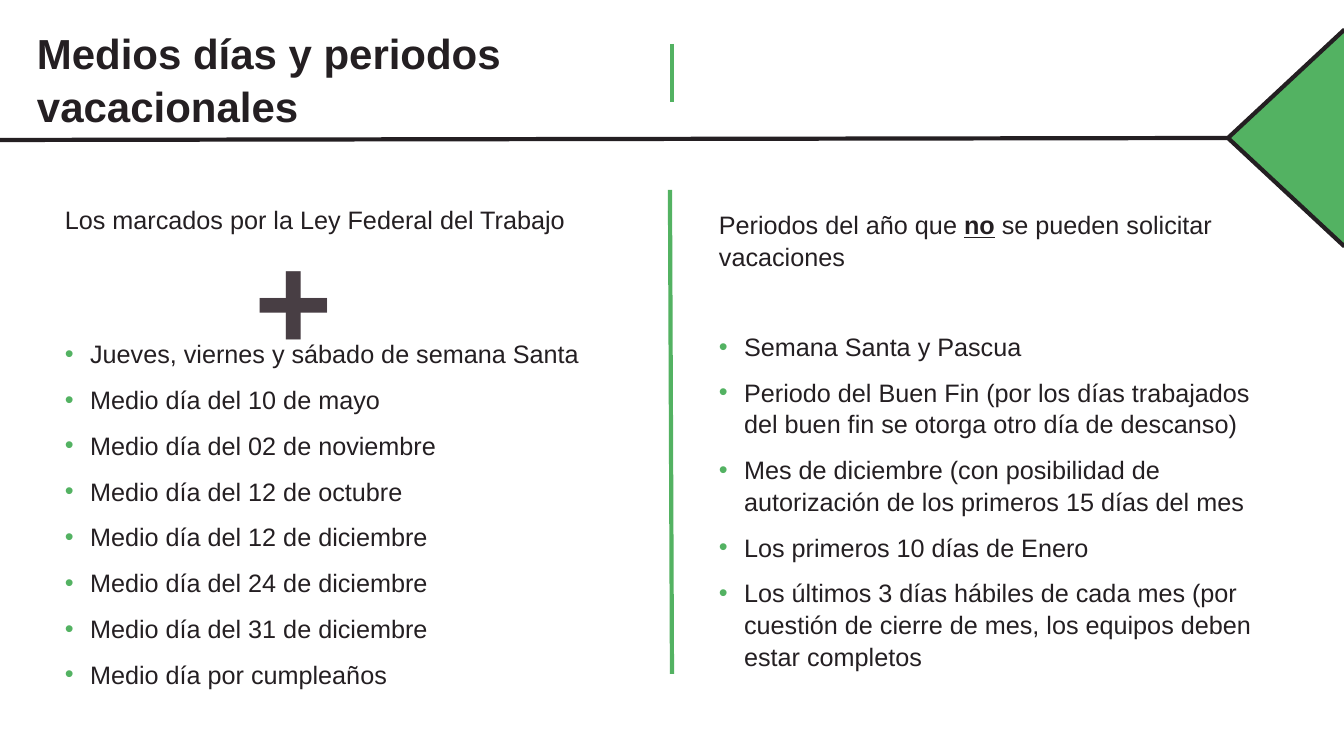
from lxml import etree
from pptx import Presentation
from pptx.dml.color import RGBColor
from pptx.enum.shapes import MSO_CONNECTOR, MSO_SHAPE
from pptx.enum.text import MSO_AUTO_SIZE, PP_ALIGN
from pptx.oxml.ns import qn
from pptx.util import Emu, Inches, Pt

STRAIGHT = MSO_CONNECTOR.STRAIGHT
DIAMOND = MSO_SHAPE.DIAMOND
LEFT, CENTER = PP_ALIGN.LEFT, PP_ALIGN.CENTER
FIT_SHAPE, FIXED = MSO_AUTO_SIZE.SHAPE_TO_FIT_TEXT, MSO_AUTO_SIZE.NONE

INK = RGBColor(0x24, 0x1F, 0x22)
GREEN = RGBColor(0x53, 0xB2, 0x62)
PLUM = RGBColor(0x48, 0x3E, 0x44)
WHITE = RGBColor(0xFF, 0xFF, 0xFF)

HOLIDAYS = [
    "Jueves, viernes y sábado de semana Santa",
    "Medio día del 10 de mayo",
    "Medio día del 02 de noviembre",
    "Medio día del 12 de octubre",
    "Medio día del 12 de diciembre",
    "Medio día del 24 de diciembre",
    "Medio día del 31 de diciembre",
    "Medio día por cumpleaños",
]
BLOCKED_PERIODS = [
    "Semana Santa y Pascua",
    "Periodo del Buen Fin (por los días trabajados del buen fin se otorga otro día de descanso)",
    "Mes de diciembre (con posibilidad de autorización de los primeros 15 días del mes",
    "Los primeros 10 días de Enero",
    "Los últimos 3 días hábiles de cada mes (por cuestión de cierre de mes, los equipos deben estar completos",
]


def px(length):
    return Emu(round(length * 914400 / 100.8))


def add_solid(parent, tag, color):
    holder = etree.SubElement(parent, qn(tag))
    etree.SubElement(holder, qn("a:srgbClr"), val=str(color))


class SlideBuilder:
    font = "Arial"
    line_width = Pt(3)
    line_spacing = 1.05
    bullet_gap = Pt(10)
    bullet_indent = Inches(0.25)

    def __init__(self, slide):
        self.shapes = slide.shapes

    def line(self, x1, y1, x2, y2, color):
        rule = self.shapes.add_connector(STRAIGHT, px(x1), px(y1), px(x2), px(y2))
        rule.line.color.rgb = color
        rule.line.width = self.line_width
        etree.SubElement(rule._element.spPr, qn("a:effectLst"))
        return rule

    def diamond(self, x, y, width, height, fill, outline):
        ornament = self.shapes.add_shape(DIAMOND, px(x), px(y), px(width), px(height))
        ornament.shadow.inherit = False
        ornament.fill.solid()
        ornament.fill.fore_color.rgb = fill
        ornament.line.color.rgb = outline
        ornament.line.width = self.line_width
        return ornament

    def frame(self, x, y, width, height, auto_size=FIXED):
        frame = self.shapes.add_textbox(px(x), px(y), px(width), px(height)).text_frame
        frame.word_wrap = True
        frame.auto_size = auto_size
        return frame

    def paragraph(self, frame, align=LEFT, before=None):
        first = frame.paragraphs[0]
        paragraph = frame.add_paragraph() if first.runs else first
        paragraph.alignment = align
        paragraph.line_spacing = self.line_spacing
        if before is not None:
            paragraph.space_before = before
        return paragraph

    def run(self, paragraph, text, size=18, color=INK, bold=False, underline=False):
        run = paragraph.add_run()
        run.text = text
        run.font.name = self.font
        run.font.size = Pt(size)
        run.font.color.rgb = color
        run.font.bold = bold
        run.font.underline = underline
        return run

    def outline(self, run, color, width):
        ln = etree.Element(qn("a:ln"), w=str(Pt(width)))
        add_solid(ln, "a:solidFill", color)
        run.font._element.insert(0, ln)

    def bullets(self, frame, items, lead):
        for index, item in enumerate(items):
            gap = self.bullet_gap if index else Pt(lead)
            paragraph = self.paragraph(frame, before=gap)
            properties = paragraph._p.get_or_add_pPr()
            properties.set("marL", str(self.bullet_indent))
            properties.set("indent", str(-self.bullet_indent))
            add_solid(properties, "a:buClr", GREEN)
            etree.SubElement(properties, qn("a:buFont"), typeface=self.font)
            etree.SubElement(properties, qn("a:buChar"), char="•")
            self.run(paragraph, item)


def main():
    deck = Presentation()
    deck.slide_width, deck.slide_height = px(1344), px(756)
    page = SlideBuilder(deck.slides.add_slide(deck.slide_layouts[6]))

    header_rule = page.line(0, 140, 1228, 138, INK)
    title = page.frame(27, 20, 765, 112, FIT_SHAPE)
    for title_line in ("Medios días y periodos", "vacacionales"):
        page.run(page.paragraph(title), title_line, size=30, bold=True)
    page.line(672, 44, 672, 102, GREEN)
    corner = page.diamond(1228, 30, 232, 216, GREEN, INK)
    header_rule.end_connect(corner, 1)

    holidays = page.frame(55, 198, 644, 477)
    page.run(page.paragraph(holidays), "Los marcados por la Ley Federal del Trabajo")
    page.bullets(holidays, HOLIDAYS, lead=73.2)

    plus = page.frame(235, 203, 117, 173, FIT_SHAPE)
    plus_sign = page.run(page.paragraph(plus, CENTER), "+", size=96, color=PLUM, bold=True)
    page.outline(plus_sign, WHITE, 1.06)

    page.line(670, 190, 672, 674, GREEN)

    blocked = page.frame(709, 203, 590, 477)
    blocked_heading = page.paragraph(blocked)
    page.run(blocked_heading, "Periodos del año que ")
    page.run(blocked_heading, "no", bold=True, underline=True)
    page.run(blocked_heading, " se pueden solicitar vacaciones")
    page.bullets(blocked, BLOCKED_PERIODS, lead=41.6)

    deck.save("out.pptx")


if __name__ == "__main__":
    main()
